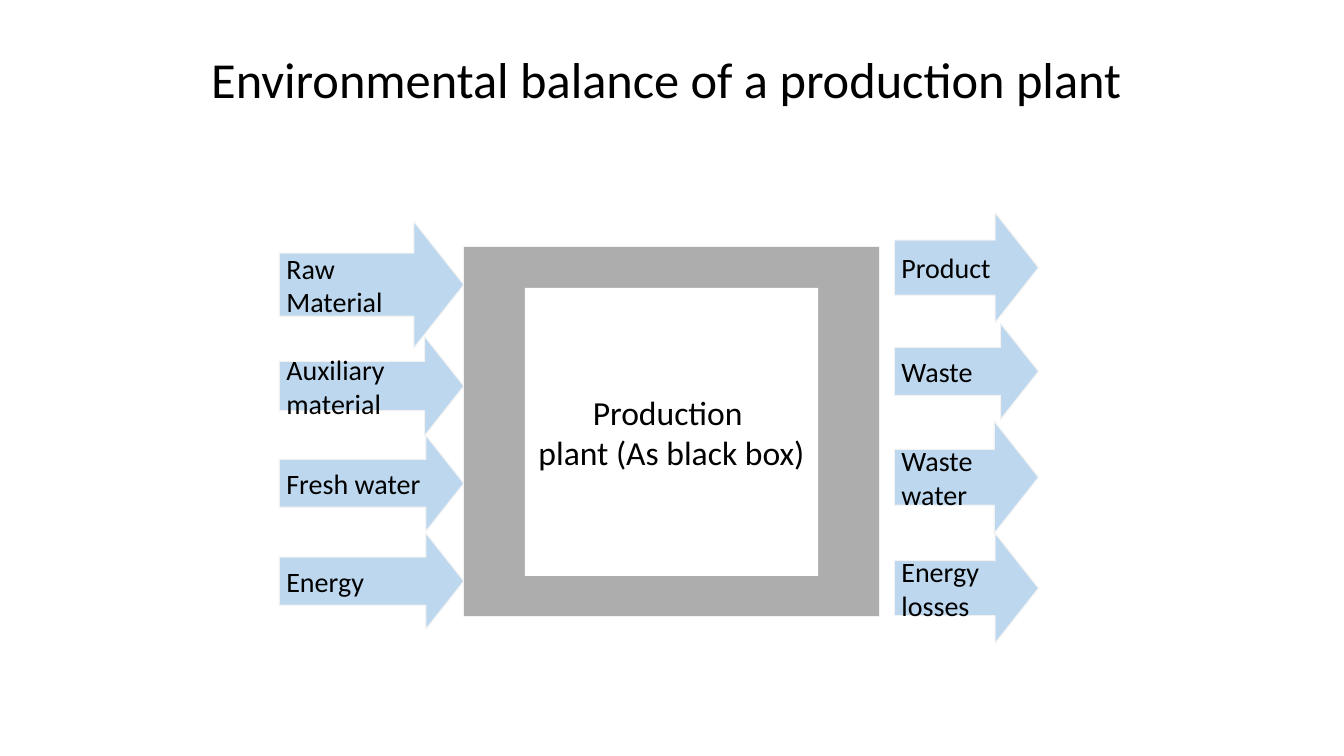
"""Build a slide showing the inputs and outputs of a production plant."""
from dataclasses import dataclass

from lxml.etree import SubElement
from pptx import Presentation
from pptx.dml.color import RGBColor as Color
from pptx.enum.shapes import MSO_SHAPE as Form
from pptx.enum.text import MSO_ANCHOR as Anchor, MSO_AUTO_SIZE as AutoSize, PP_ALIGN as Align
from pptx.oxml.ns import qn
from pptx.util import Inches, Pt

TITLE = "Environmental balance of a production plant"
PLANT = ["Production ", "plant (As black box)"]
FLOWS = {
    "inputs": [
        ("Raw Material", 2.2, 1.25),
        ("Auxiliary material", 3.34, 0.98),
        ("Fresh water", 4.32, 0.95),
        ("Energy", 5.29, 0.95),
    ],
    "outputs": [
        ("Product", 2.11, 1.09),
        ("Waste", 3.21, 0.95),
        ("Waste water", 4.18, 1.11),
        ("Energy losses", 5.29, 1.09),
    ],
}
COLUMNS = {"inputs": (2.77, 1.83), "outputs": (8.87, 1.43)}
TITLE_AREA = (1.95, 0.27, 9.32, 1.09)
FRAME = (4.6, 2.45, 4.12, 3.67)
CORE_WIDTH, CORE_HEIGHT = 2.91, 2.86


@dataclass(frozen=True)
class Theme:
    font: str = "Calibri"
    ink: str = "000000"
    paper: str = "FFFFFF"
    wall: str = "808080"
    wall_opacity: int = 64
    arrow: str = "BDD7EE"
    edge: str = "F2F2F2"
    title_size: int = 36
    plant_size: int = 24
    flow_size: int = 20


THEME = Theme()


def write(shape, lines, size, align, spacing=None):
    frame = shape.text_frame
    frame.word_wrap = True
    frame.auto_size = AutoSize.NONE
    frame.vertical_anchor = Anchor.MIDDLE
    for index, line in enumerate(lines):
        para = frame.add_paragraph() if index else frame.paragraphs[0]
        para.alignment = align
        para.line_spacing = spacing
        span = para.add_run()
        span.text = line
        span.font.name = THEME.font
        span.font.size = Pt(size)
        span.font.color.rgb = Color.from_string(THEME.ink)


def add_block(page, form, area, fill, edge=None):
    block = page.shapes.add_shape(form, *map(Inches, area))
    block.shadow.inherit = False
    block.fill.solid()
    block.fill.fore_color.rgb = Color.from_string(fill)
    if edge:
        block.line.color.rgb = Color.from_string(edge)
        block.line.width = Pt(0.75)
    else:
        block.line.fill.background()
    frame = block.text_frame
    frame.margin_left = frame.margin_right = Inches(0.07)
    frame.margin_top = frame.margin_bottom = Inches(0.04)
    return block


def add_plant(page):
    wall = add_block(page, Form.RECTANGLE, FRAME, THEME.wall, THEME.edge)
    tint = wall.fill._xPr.find(qn("a:solidFill"))[0]
    SubElement(tint, qn("a:alpha")).set("val", str(THEME.wall_opacity * 1000))
    left, top, width, height = FRAME
    core_area = (left + (width - CORE_WIDTH) / 2, top + (height - CORE_HEIGHT) / 2,
                 CORE_WIDTH, CORE_HEIGHT)
    core = add_block(page, Form.RECTANGLE, core_area, THEME.paper)
    write(core, PLANT, THEME.plant_size, Align.CENTER)


def add_flows(page):
    for side, flows in FLOWS.items():
        left, width = COLUMNS[side]
        for label, top, height in flows:
            arrow = add_block(page, Form.RIGHT_ARROW, (left, top, width, height),
                              THEME.arrow, THEME.edge)
            arrow.adjustments[0] = 0.5
            arrow.adjustments[1] = 0.395
            write(arrow, [label], THEME.flow_size, Align.LEFT)


def main():
    deck = Presentation()
    deck.slide_width, deck.slide_height = Inches(13.33), Inches(7.5)
    page = deck.slides.add_slide(deck.slide_layouts[5])
    title = page.shapes.title
    title.left, title.top, title.width, title.height = map(Inches, TITLE_AREA)
    write(title, [TITLE], THEME.title_size, Align.CENTER, 0.9)
    add_plant(page)
    add_flows(page)
    deck.save("out.pptx")


if __name__ == "__main__":
    main()
